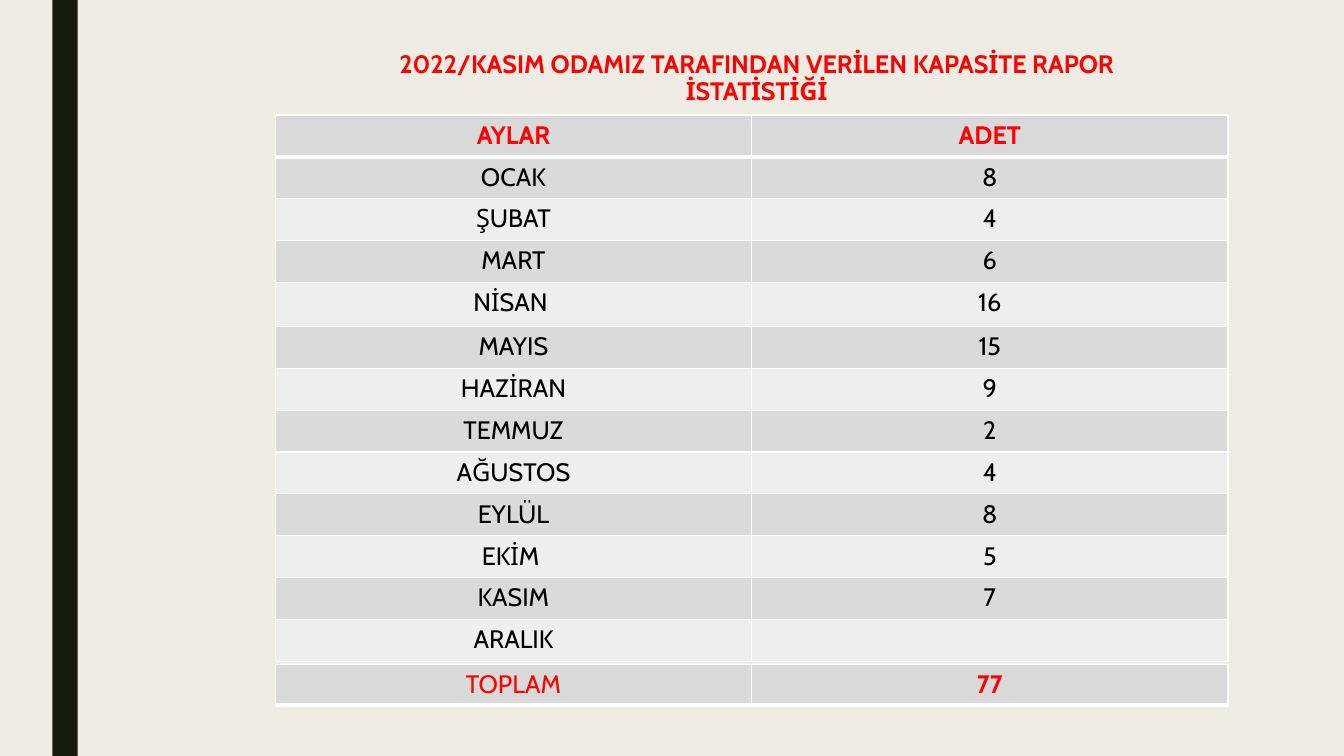
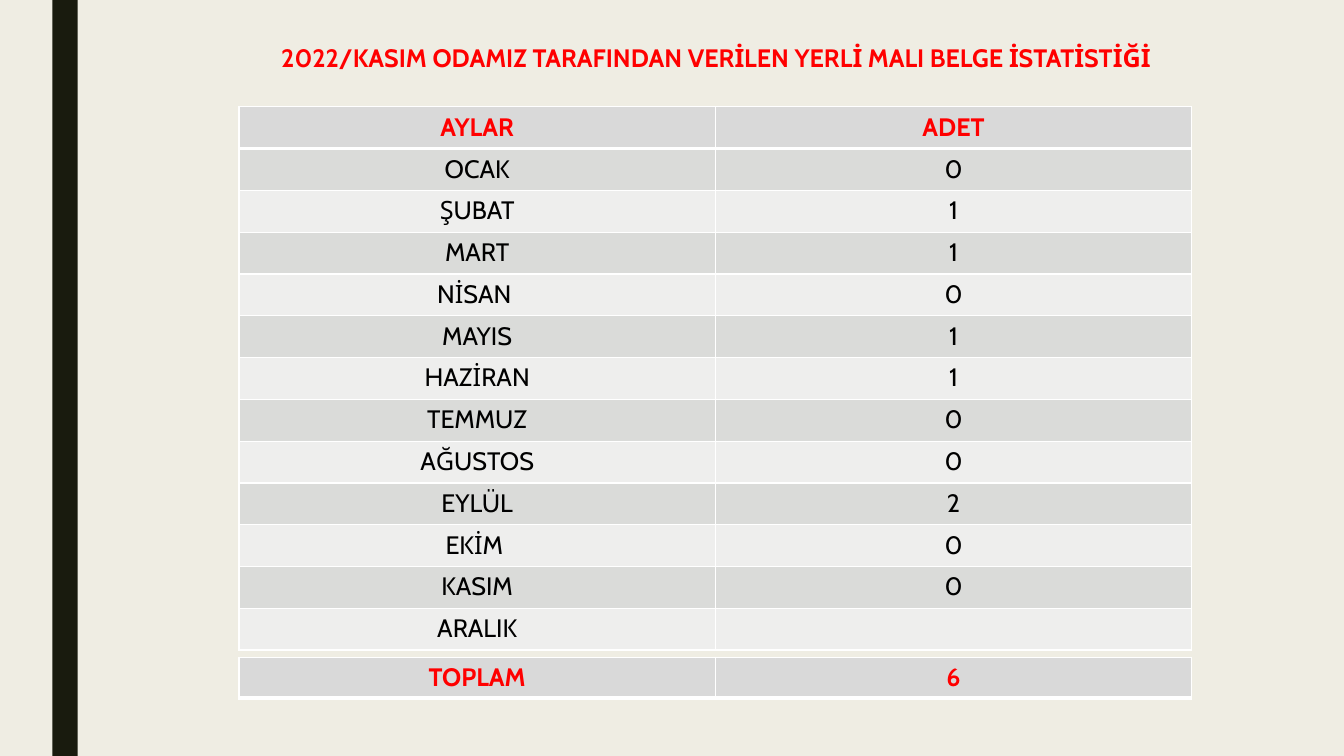
from dataclasses import dataclass

from lxml import etree
from pptx import Presentation
from pptx.dml.color import RGBColor
from pptx.enum.shapes import MSO_SHAPE
from pptx.enum.text import MSO_ANCHOR, PP_ALIGN
from pptx.oxml.ns import qn
from pptx.util import Inches, Pt

RECT = MSO_SHAPE.RECTANGLE
CENTER = PP_ALIGN.CENTER
TOP = MSO_ANCHOR.TOP
TITLE_ONLY = 5


@dataclass(frozen=True)
class Theme:
    font: str = "Cabin"
    size: int = 18
    back: str = "EFEDE3"
    band: str = "191B0E"
    accent: str = "FF0000"
    ink: str = "000000"
    head: str = "D9D9D9"
    odd: str = "DADBD9"
    even: str = "EEEEED"
    rule: str = "FFFFFF"
    thin: int = 1
    thick: int = 3


THEME = Theme()
WIDTH, HEIGHT = Inches(13.33), Inches(7.5)
TABLE_WIDTH = 70.89
TOTAL_HEIGHT = 5.33

HEADER = ("AYLAR", "ADET")
MONTHS = ("OCAK", "ŞUBAT", "MART", "NİSAN ", "MAYIS", "HAZİRAN", "TEMMUZ",
          "AĞUSTOS", "EYLÜL", "EKİM ", "KASIM", "ARALIK")
APRIL = 4


def wide(share):
    """Turn a percentage of the slide's width into a length."""
    return int(WIDTH * share / 100)


def high(share):
    """Turn a percentage of the slide's height into a length."""
    return int(HEIGHT * share / 100)


def box(left, top, width, height):
    return wide(left), high(top), wide(width), high(height)


def paint(fill, color):
    fill.solid()
    fill.fore_color.rgb = RGBColor.from_string(color)


def write(frame, text, color, bold):
    para = frame.paragraphs[0]
    para.alignment = CENTER
    if text:
        run = para.add_run()
        run.text = text
        run.font.name = THEME.font
        run.font.size = Pt(THEME.size)
        run.font.bold = bold
        run.font.color.rgb = RGBColor.from_string(color)
    return para


def edge(cell, base):
    """Rule all four sides of a cell; base is the weight of the bottom one."""
    props = cell._tc.get_or_add_tcPr()
    for tag, weight in (("lnL", THEME.thin), ("lnR", THEME.thin),
                        ("lnT", THEME.thin), ("lnB", base)):
        line = etree.SubElement(props, qn("a:" + tag), w=str(Pt(weight)))
        fill = etree.SubElement(line, qn("a:solidFill"))
        etree.SubElement(fill, qn("a:srgbClr"), val=THEME.rule)


def add_cell(cell, text, fill, color, bold, base):
    edge(cell, base)
    paint(cell.fill, fill)
    cell.vertical_anchor = TOP
    write(cell.text_frame, text, color, bold)


def add_grid(slide, place, count):
    table = slide.shapes.add_table(count, len(HEADER), *place).table
    table.horz_banding = False
    return table


def add_months(slide, place, counts, swell):
    """Add the monthly table; swell is the extra height of April's row."""
    rows = [HEADER, *zip(MONTHS, counts)]
    table = add_grid(slide, place, len(rows))
    step = (place[3] - high(swell)) // len(rows)
    for i, row in enumerate(rows):
        table.rows[i].height = step + (high(swell) if i == APRIL else 0)
        if i == 0:
            look = THEME.head, THEME.accent, True, THEME.thick
        else:
            fill = THEME.odd if i % 2 else THEME.even
            look = fill, THEME.ink, False, THEME.thin
        for j, text in enumerate(row):
            add_cell(table.cell(i, j), text, *look)


def add_total(slide, place, total, strong):
    """Add the sum row; strong makes its label bold."""
    table = add_grid(slide, place, 1)
    for j, (text, bold) in enumerate((("TOPLAM", strong), (total, True))):
        add_cell(table.cell(0, j), text, THEME.head, THEME.accent, bold,
                 THEME.thick)


def add_title(slide, text, place):
    title = slide.shapes.title
    title.left, title.top, title.width, title.height = place
    frame = title.text_frame
    frame.word_wrap = True
    frame.vertical_anchor = TOP
    frame.margin_left = frame.margin_right = Inches(0.05)
    write(frame, text, THEME.accent, True).line_spacing = 0.89


def set_master(deck, slide):
    """Give the master its background and side band, drawn by way of a slide."""
    master = deck.slide_master
    paint(master.background.fill, THEME.back)
    band = slide.shapes.add_shape(RECT, *box(3.9, 0, 1.88, 100))
    band.shadow.inherit = False
    paint(band.fill, THEME.band)
    band.line.fill.background()
    master.shapes.element.insert(2, band.element)


def add_report(deck, text, place, corner, height, counts, total,
               gap, swell=0, strong=True):
    slide = deck.slides.add_slide(deck.slide_layouts[TITLE_ONLY])
    left, top = corner
    add_title(slide, text, box(*place))
    add_months(slide, box(left, top, TABLE_WIDTH, height), counts, swell)
    below = top + height + gap
    add_total(slide, box(left, below, TABLE_WIDTH, TOTAL_HEIGHT), total, strong)
    return slide


def main():
    deck = Presentation()
    deck.slide_width, deck.slide_height = WIDTH, HEIGHT
    first = add_report(
        deck, "2022/KASIM ODAMIZ TARAFINDAN VERİLEN KAPASİTE RAPOR İSTATİSTİĞİ",
        place=(25.43, 6.27, 61.74, 5.6), corner=(20.48, 15.2), height=72.27,
        counts=("8", "4", "6", "16", "15", "9", "2", "4", "8", "5", "7", ""),
        total="77", gap=0.4, swell=0.33, strong=False)
    set_master(deck, first)
    add_report(
        deck, "2022/KASIM ODAMIZ TARAFINDAN VERİLEN YERLİ MALI BELGE İSTATİSTİĞİ",
        place=(20.11, 5.47, 66.32, 5.87), corner=(17.78, 14.13), height=71.87,
        counts=("0", "1", "1", "0", "1", "1", "0", "0", "2", "0", "0", ""),
        total="6", gap=0.93)
    deck.save("out.pptx")


if __name__ == "__main__":
    main()
